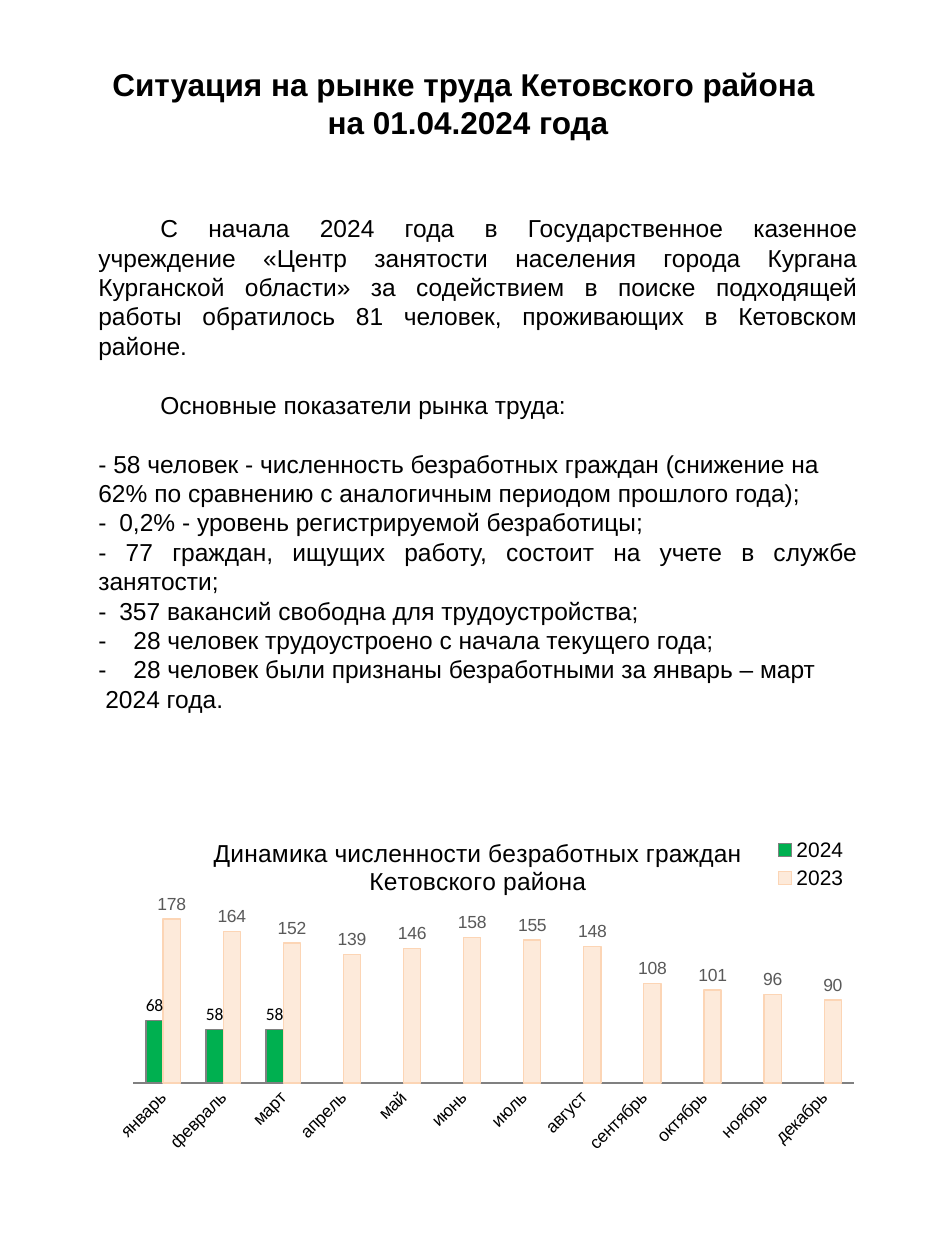
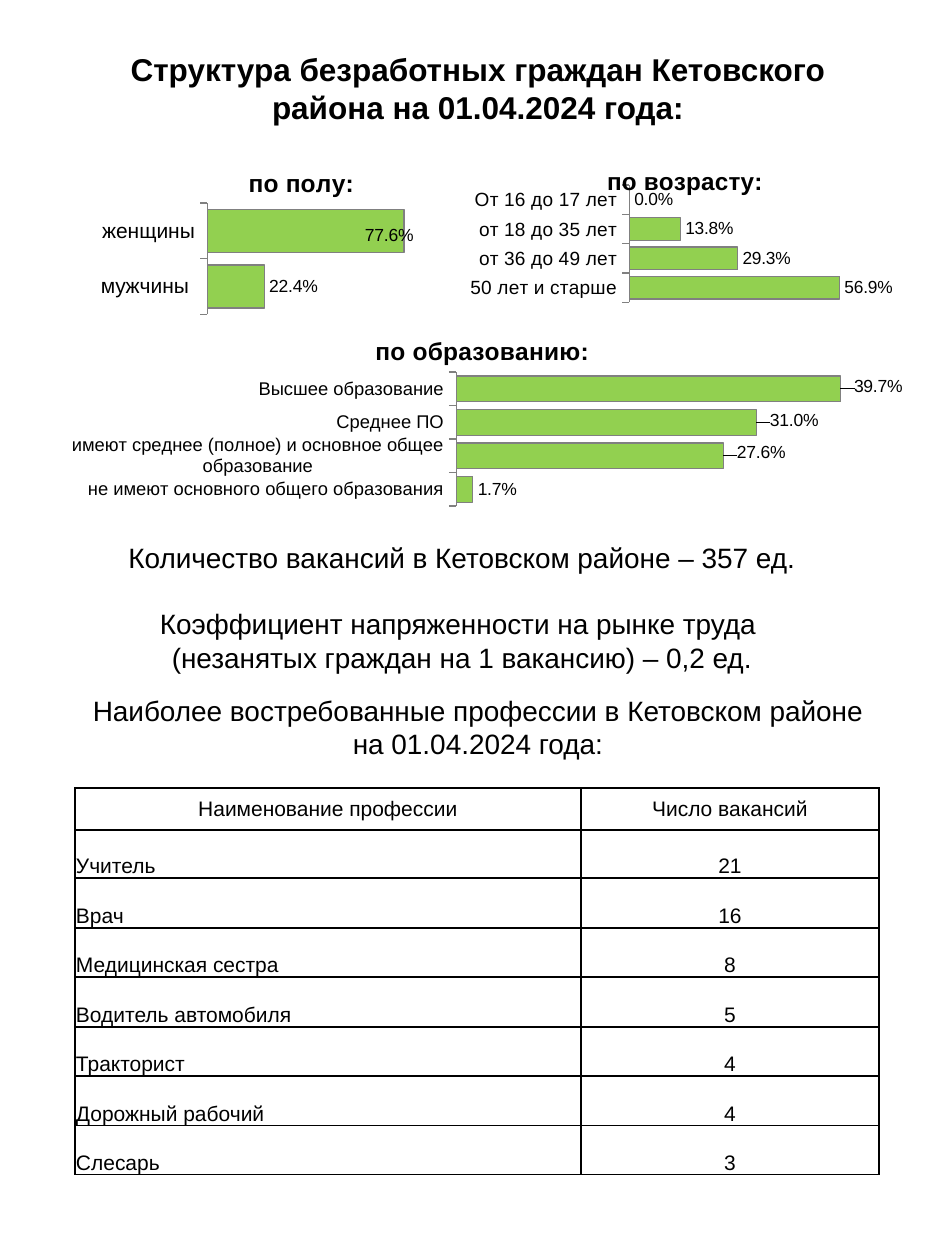
from lxml import etree
from pptx import Presentation
from pptx import util as u
from pptx.chart.data import CategoryChartData
from pptx.dml.color import RGBColor
from pptx.enum import chart as ch, text
from pptx.oxml import parse_xml
from pptx.oxml.ns import nsdecls, qn

FONT, INK, GRAY, LIME = "Arial", "000000", "808080", "92D050"
LEFT, MID = text.PP_ALIGN.LEFT, text.PP_ALIGN.CENTER
FULL = text.PP_ALIGN.JUSTIFY
TOP, LOW = text.MSO_ANCHOR.TOP, text.MSO_ANCHOR.BOTTOM
CENTER = text.MSO_ANCHOR.MIDDLE
MONTHS = ["январь", "февраль", "март", "апрель", "май", "июнь", "июль",
          "август", "сентябрь", "октябрь", "ноябрь", "декабрь"]
JOBS = [("Учитель", 21), ("Врач", 16), ("Медицинская сестра", 8),
        ("Водитель автомобиля", 5), ("Тракторист", 4),
        ("Дорожный рабочий", 4), ("Слесарь", 3)]


def px(n):
    return u.Emu(round(n * 914400 / 126))


def hue(code):
    return RGBColor.from_string(code)


def style(font, size, color=INK, bold=False, name=FONT):
    font.size, font.bold, font.name = u.Pt(size), bold, name
    font.color.rgb = hue(color)


def write(par, words, size=14, bold=False, align=MID, gap=0, first=0, hang=0):
    par.text = words
    par.alignment = align
    par.space_after = u.Pt(gap)
    for run in par.runs:
        style(run.font, size, bold=bold)
    if first or hang:
        props = par._p.get_or_add_pPr()
        props.set("marL", str(px(hang)))
        props.set("indent", str(px(first - hang)))


def block(slide, box, items, anchor=TOP, **base):
    frame = slide.shapes.add_textbox(*map(px, box)).text_frame
    frame.word_wrap = True
    frame.auto_size = text.MSO_AUTO_SIZE.SHAPE_TO_FIT_TEXT
    frame.vertical_anchor = anchor
    for i, (words, extra) in enumerate(items):
        par = frame.add_paragraph() if i else frame.paragraphs[0]
        write(par, words, **{**base, **extra})


def heading(slide, box, words):
    block(slide, box, [(words, {})], size=18, bold=True)


def place(node, spot, index=1, inner=False, edge=True):
    for old in node.findall(qn("c:layout")):
        node.remove(old)
    layout = parse_xml(f"<c:layout {nsdecls('c')}><c:manualLayout/></c:layout>")
    marks = [("layoutTarget", "inner")] if inner else []
    marks += [("xMode", "edge"), ("yMode", "edge")] if edge else []
    for tag, val in marks + list(zip("xywh", spot)):
        etree.SubElement(layout[0], qn("c:" + tag)).set("val", str(val))
    node.insert(index, layout)


def graph(slide, box, kind, title, cats, rows, plot, top, gap, fmt,
          size=12, bold=True, spot=None):
    data = CategoryChartData(number_format=fmt)
    data.categories = cats
    for name, vals, *_ in rows:
        data.add_series(name, vals)
    chart = slide.shapes.add_chart(kind, *map(px, box), data).chart
    style(chart.font, 12, name="Calibri")
    chart.has_legend = False
    chart.has_title = True
    write(chart.chart_title.text_frame.paragraphs[0], title, bold=bold)
    if spot:
        place(chart.element.xpath("./c:chart/c:title")[0], spot)
    place(chart.element.xpath(".//c:plotArea")[0], plot, 0, True)
    val = chart.value_axis
    val.minimum_scale, val.maximum_scale = 0, top
    val.has_major_gridlines = val.visible = False
    style(chart.category_axis.tick_labels.font, size)
    chart.category_axis.format.line.color.rgb = hue(GRAY)
    bars = chart.plots[0]
    bars.gap_width, bars.overlap, bars.vary_by_categories = gap, 0, False
    for row, (_, _, fill, edge, ink, face) in zip(bars.series, rows):
        row.format.fill.solid()
        row.format.fill.fore_color.rgb = hue(fill)
        row.format.line.color.rgb = hue(edge)
        row.format.line.width = u.Pt(0.75)
        tags = row.data_labels
        tags.show_value = True
        tags.position = ch.XL_LABEL_POSITION.OUTSIDE_END
        tags.number_format, tags.number_format_is_linked = fmt, False
        style(tags.font, 10, ink, name=face)
    return chart


def shares(slide, box, title, cats, vals, plot, top, spot, size=12,
           flip=True, shifts=()):
    rows = [(title, vals, LIME, GRAY, INK, FONT)]
    chart = graph(slide, box, ch.XL_CHART_TYPE.BAR_CLUSTERED, title, cats, rows,
                  plot, top, 30, "0.0%", size, spot=spot)
    axis = chart.category_axis
    axis.reverse_order = flip
    axis.major_tick_mark = ch.XL_TICK_MARK.OUTSIDE
    for i, _ in shifts:
        tag = chart.plots[0].series[0].points[i].data_label
        style(tag.font, 10)
        tag.position = ch.XL_LABEL_POSITION.OUTSIDE_END
    for node, (_, move) in zip(chart.element.xpath(".//c:dLbl"), shifts):
        place(node, move, edge=False)


def trend(slide):
    rows = [("2024", [68, 58, 58] + [None] * 9, "00B050", GRAY, INK, "Calibri"),
            ("2023", [178, 164, 152, 139, 146, 158, 155, 148, 108, 101, 96, 90],
             "FDEADA", "FCD5B5", "595959", FONT)]
    chart = graph(slide, (86, 819, 784, 362), ch.XL_CHART_TYPE.COLUMN_CLUSTERED,
                  "Динамика численности безработных граждан Кетовского района",
                  MONTHS, rows, (0.06, 0.22, 0.92, 0.51), 200, 150, "#,##0",
                  10, False)
    axis = chart.category_axis
    axis.major_tick_mark = ch.XL_TICK_MARK.NONE
    axis.tick_labels.font
    chart.element.xpath(".//c:catAx/c:txPr/a:bodyPr")[0].set("rot", "-2700000")
    chart.has_legend = True
    chart.legend.include_in_layout = False
    style(chart.legend.font, 12)
    place(chart.element.xpath(".//c:legend")[0], (0.87, 0.04, 0.11, 0.17))


def border(cell):
    props = cell._tc.get_or_add_tcPr()
    for i, side in enumerate(("lnL", "lnR", "lnT", "lnB")):
        props.insert(i, parse_xml(
            f'<a:{side} {nsdecls("a")} w="12700"><a:solidFill>'
            f'<a:srgbClr val="{INK}"/></a:solidFill></a:{side}>'))


def grid(slide, box, widths, heights, rows):
    table = slide.shapes.add_table(len(rows), len(widths), *map(px, box)).table
    table.first_row = table.horz_banding = False
    for col, width in zip(table.columns, widths):
        col.width = px(width)
    for r, (row, height) in enumerate(zip(rows, heights)):
        table.rows[r].height = px(height)
        for c, words in enumerate(row):
            cell = table.cell(r, c)
            cell.margin_left = cell.margin_right = cell.margin_top = px(1)
            cell.margin_bottom = 0
            cell.vertical_anchor = LOW if r else CENTER
            cell.fill.background()
            border(cell)
            write(cell.text_frame.paragraphs[0], str(words), 12,
                  align=LEFT if r and not c else MID)


def market(slide):
    heading(slide, (66, 59, 804, 89),
            "Ситуация на рынке труда Кетовского района \vна 01.04.2024 года")
    lead = dict(first=62, gap=16.8, align=FULL)
    block(slide, (86, 207, 784, 547), [
        ("С начала 2024 года в Государственное казенное учреждение «Центр "
         "занятости населения города Кургана Курганской области» за содействием "
         "в поиске подходящей работы обратилось 81 человек, проживающих в "
         "Кетовском районе.", lead),
        ("Основные показатели рынка труда:", lead),
        ("- 58 человек - численность безработных граждан (снижение на 62% по "
         "сравнению с аналогичным периодом прошлого года);", {}),
        ("-\t0,2% - уровень регистрируемой безработицы;", dict(hang=21)),
        ("- 77 граждан, ищущих работу, состоит на учете в службе занятости;",
         dict(align=FULL)),
        ("-\t357 вакансий свободна для трудоустройства;", dict(hang=21)),
        ("-\t28 человек трудоустроено с начала текущего года;", dict(hang=35)),
        ("-\t28 человек были признаны безработными за январь – март",
         dict(hang=35)),
        ("2024 года.", dict(first=7))], align=LEFT)
    trend(slide)


def makeup(slide):
    heading(slide, (86, 44, 784, 89),
            "Структура безработных граждан Кетовского района на 01.04.2024 года:")
    shares(slide, (86, 154, 368, 169), "по полу:", ["мужчины ", "женщины"],
           [0.224, 0.776], (0.33, 0.29, 0.62, 0.66), 0.9, (0.43, 0.05),
           flip=False, shifts=[(1, (-0.12, 0.03))])
    shares(slide, (442, 154, 451, 149), "по возрасту:",
           ["От 16 до 17 лет", "от 18 до 35 лет", "от 36 до 49 лет",
            "50 лет и старше"],
           [0, 0.138, 0.293, 0.569], (0.42, 0.21, 0.53, 0.79), 0.64,
           (0.36, 0.05), 11)
    shares(slide, (55, 323, 854, 189), "по образованию:",
           ["Высшее образование", "Среднее ПО",
            "имеют среднее (полное) и основное общее образование",
            "не имеют основного общего образования"],
           [0.397, 0.31, 0.276, 0.017], (0.47, 0.26, 0.51, 0.71), 0.45,
           (0.37, 0.04), 10.5,
           shifts=[(0, (0.01, -0.01)), (1, (0.01, -0.01)), (2, (0.01, -0.02))])
    block(slide, (52, 534, 820, 149), [
        ("Количество вакансий в Кетовском районе – 357 ед.", dict(gap=19)),
        ("Коэффициент напряженности на рынке труда ", {}),
        ("(незанятых граждан на 1 вакансию) – 0,2 ед.", {})], size=16)
    block(slide, (76, 687, 804, 81), [
        ("Наиболее востребованные профессии в Кетовском районе "
         "на 01.04.2024 года:", {})], size=16)
    grid(slide, (75, 788, 804, 387), (506, 298), [42, 48] + [50, 49] * 3,
         [("Наименование профессии", "Число вакансий")] + JOBS)


def main():
    deck = Presentation()
    deck.slide_width, deck.slide_height = px(945), px(1260)
    for draw in (market, makeup):
        draw(deck.slides.add_slide(deck.slide_layouts[6]))
    deck.save("out.pptx")


if __name__ == "__main__":
    main()
